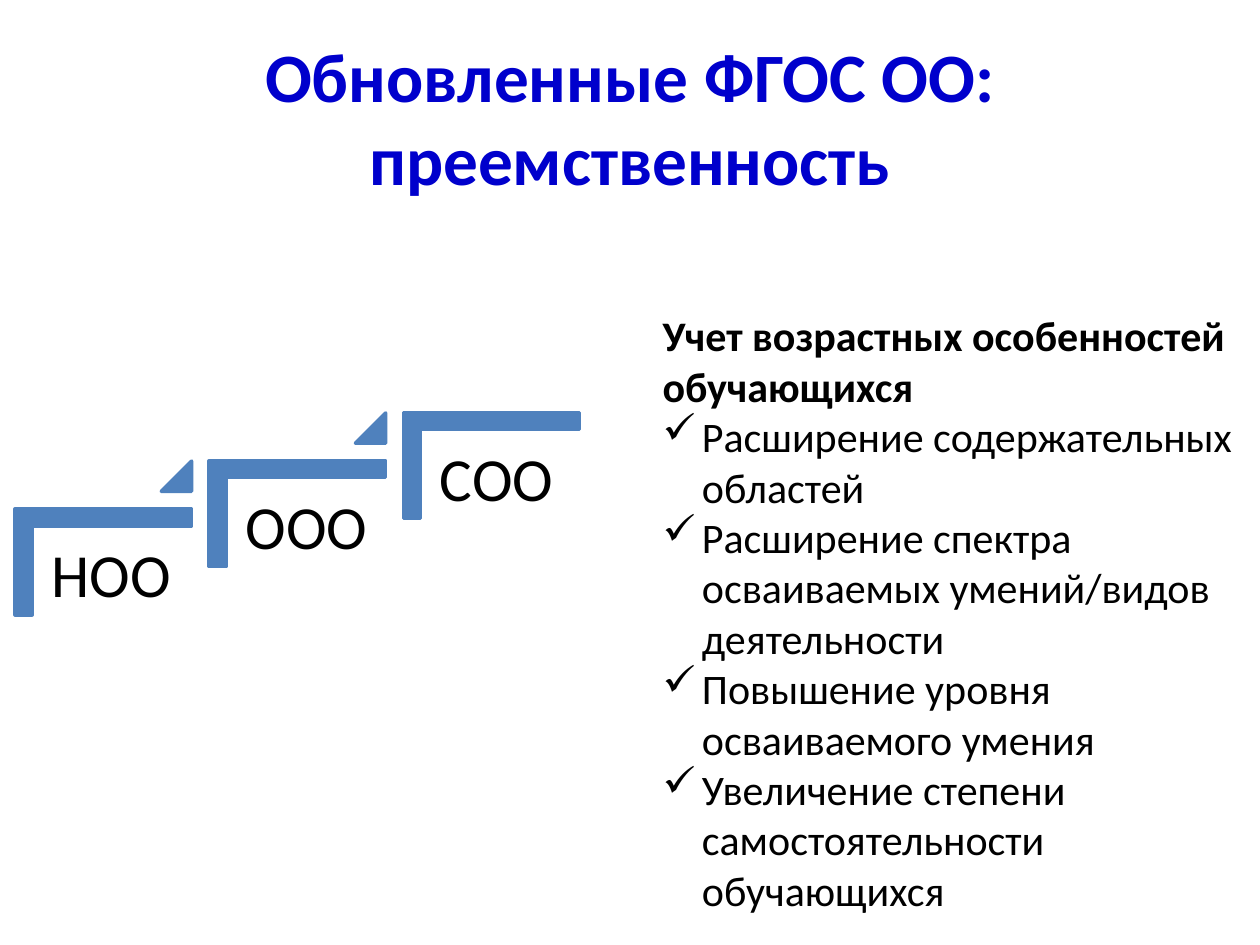
from typing import NamedTuple

from lxml.etree import SubElement
from pptx import Presentation
from pptx.dml.color import RGBColor
from pptx.enum.shapes import MSO_SHAPE
from pptx.enum.text import MSO_ANCHOR, PP_ALIGN
from pptx.oxml.ns import qn
from pptx.slide import Slide
from pptx.util import Pt

BLUE = RGBColor(0x4F, 0x81, 0xBD)
NAVY = RGBColor(0x00, 0x00, 0xCC)
BLACK = RGBColor(0x00, 0x00, 0x00)
FONT = "Calibri"
MARK = "✓"
INDENT = Pt(22.5)


class Box(NamedTuple):
    left: float
    top: float
    width: float
    height: float

    def move(self, right: float, down: float) -> "Box":
        return self._replace(left=self.left + right, top=self.top + down)

    def points(self) -> list[Pt]:
        return [Pt(value) for value in self]


class Line(NamedTuple):
    text: str
    bold: bool = False
    mark: bool = False


TITLE = Line("Обновленные ФГОС ОО: преемственность", bold=True)
LEVELS = ["НОО", "ООО", "СОО"]
POINTS = [
    Line("Учет возрастных особенностей обучающихся", bold=True),
    Line("Расширение содержательных областей", mark=True),
    Line("Расширение спектра осваиваемых умений/видов деятельности", mark=True),
    Line("Повышение уровня осваиваемого умения", mark=True),
    Line("Увеличение степени самостоятельности обучающихся", mark=True),
]

CORNER = Box(28.8, 270.7, 60.5, 100.8)
LABEL = Box(18.9, 300.7, 90.7, 80)
WEDGE = Box(92.2, 263.5, 17.3, 17.3)
RUN, RISE = 110.9, -27.5


def add_text(slide: Slide, box: Box, lines: list[Line], *, size: float,
             color: RGBColor = BLACK, align: PP_ALIGN = PP_ALIGN.LEFT,
             anchor: MSO_ANCHOR = MSO_ANCHOR.TOP, inset: float | None = None,
             pitch: float | None = None, after: float | None = None) -> None:
    frame = slide.shapes.add_textbox(*box.points()).text_frame
    frame.word_wrap = True
    frame.vertical_anchor = anchor
    if inset is not None:
        frame.margin_left = frame.margin_right = Pt(inset)
        frame.margin_top = frame.margin_bottom = Pt(inset)
    for index, line in enumerate(lines):
        para = frame.add_paragraph() if index else frame.paragraphs[0]
        para.alignment = align
        para.line_spacing = pitch
        if after is not None:
            para.space_after = Pt(after)
        if line.mark:
            props = para._p.get_or_add_pPr()
            props.set("marL", str(INDENT))
            props.set("indent", str(-INDENT))
            SubElement(props, qn("a:buChar")).set("char", MARK)
        run = para.add_run()
        run.text = line.text
        font = run.font
        font.name, font.size, font.bold = FONT, Pt(size), line.bold
        font.color.rgb = color


def add_solid(slide: Slide, kind: MSO_SHAPE, box: Box,
              adjust: list[float], turn: float = 0) -> None:
    shape = slide.shapes.add_shape(kind, *box.points())
    shape.shadow.inherit = False
    shape.rotation = turn
    for index, value in enumerate(adjust):
        shape.adjustments[index] = value
    shape.fill.solid()
    shape.fill.fore_color.rgb = BLUE
    shape.line.color.rgb = BLUE
    shape.line.width = Pt(2)


def add_stairs(slide: Slide) -> None:
    for index, name in enumerate(LEVELS):
        shift = index * RUN, index * RISE
        add_solid(slide, MSO_SHAPE.CORNER, CORNER.move(*shift), [0.16, 0.16], 90)
        add_text(slide, LABEL.move(*shift), [Line(name)], size=35,
                 inset=10.5, pitch=0.9, after=12.25)
        if index < len(LEVELS) - 1:
            add_solid(slide, MSO_SHAPE.ISOSCELES_TRIANGLE, WEDGE.move(*shift), [1])


def main() -> None:
    deck = Presentation()
    deck.slide_width, deck.slide_height = Pt(720), Pt(540)
    slide = deck.slides.add_slide(deck.slide_layouts[6])
    add_text(slide, Box(0, 21.6, 720, 90), [TITLE], size=39.6, color=NAVY,
             align=PP_ALIGN.CENTER, anchor=MSO_ANCHOR.MIDDLE)
    add_stairs(slide)
    add_text(slide, Box(371.5, 173.5, 354.2, 356.4), POINTS, size=24)
    deck.save("out.pptx")


if __name__ == "__main__":
    main()
